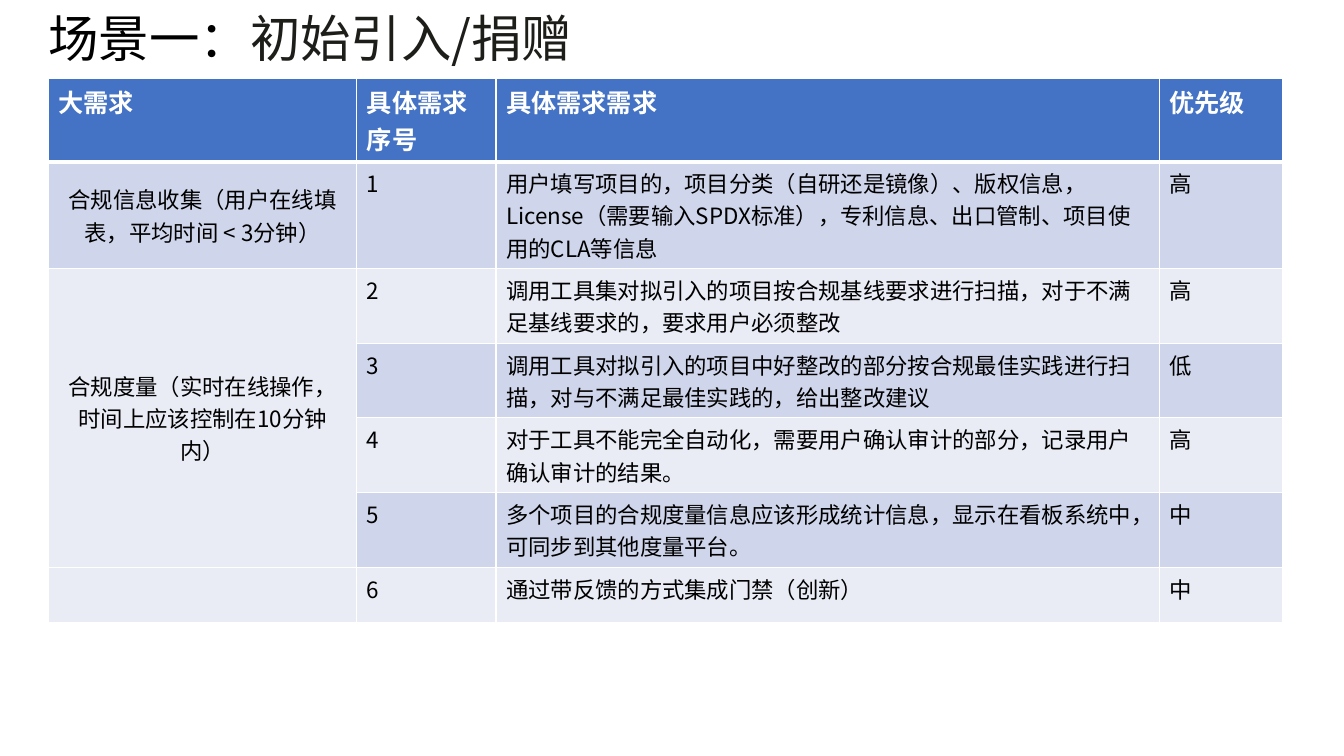
from dataclasses import dataclass

from lxml.etree import SubElement
from pptx import Presentation
from pptx.dml.color import RGBColor
from pptx.enum.text import MSO_ANCHOR as Anchor, MSO_AUTO_SIZE as AutoSize, PP_ALIGN as Align
from pptx.oxml.ns import qn
from pptx.util import Inches, Pt

FONT = "Noto Sans CJK SC"
BLACK = RGBColor(0x00, 0x00, 0x00)
INK = RGBColor(0x1D, 0x1D, 0x1A)
WHITE = RGBColor(0xFF, 0xFF, 0xFF)
HEADER_BLUE = RGBColor(0x44, 0x72, 0xC4)
BAND_DARK = RGBColor(0xCF, 0xD5, 0xEA)
BAND_LIGHT = RGBColor(0xE9, 0xEB, 0xF5)

COLUMN_WIDTHS = (3.06, 1.38, 6.58, 1.22)
HEADER_HEIGHT, ROW_HEIGHT = 0.75, 0.55
HEADINGS = ("大需求", "具体需求序号", "具体需求需求", "优先级")


@dataclass(frozen=True)
class Requirement:
    detail: str
    priority: str


@dataclass(frozen=True)
class Group:
    name: str
    requirements: tuple[Requirement, ...]


GROUPS = (
    Group("合规信息收集（用户在线填表，平均时间 < 3分钟）", (
        Requirement("用户填写项目的，项目分类（自研还是镜像）、版权信息，License（需要输入SPDX标准），"
                    "专利信息、出口管制、项目使用的CLA等信息", "高"),
    )),
    Group("合规度量（实时在线操作，时间上应该控制在10分钟内）", (
        Requirement("调用工具集对拟引入的项目按合规基线要求进行扫描，对于不满足基线要求的，要求用户必须整改", "高"),
        Requirement("调用工具对拟引入的项目中好整改的部分按合规最佳实践进行扫描，"
                    "对与不满足最佳实践的，给出整改建议", "低"),
        Requirement("对于工具不能完全自动化，需要用户确认审计的部分，记录用户确认审计的结果。", "高"),
        Requirement("多个项目的合规度量信息应该形成统计信息，显示在看板系统中，可同步到其他度量平台。", "中"),
    )),
    Group("", (Requirement("通过带反馈的方式集成门禁（创新）", "中"),)),
)


def add_run(paragraph, text: str, size: float, color: RGBColor, bold: bool = False) -> None:
    run = paragraph.add_run()
    run.text = text
    run.font.size = Pt(size)
    run.font.bold = bold
    run.font.name = FONT
    run.font.color.rgb = color
    SubElement(run.font._element, qn("a:ea"), typeface=FONT)


def set_borders(cell, bottom_width: float) -> None:
    properties = cell._tc.get_or_add_tcPr()
    widths = {"lnL": 1, "lnR": 1, "lnT": 1, "lnB": bottom_width}
    for position, (side, width) in enumerate(widths.items()):
        border = SubElement(properties, qn(f"a:{side}"), w=str(Pt(width)))
        line_fill = SubElement(border, qn("a:solidFill"))
        SubElement(line_fill, qn("a:srgbClr"), val=str(WHITE))
        properties.insert(position, border)


def fill_cell(cell, text: str, fill: RGBColor, header: bool = False, centred: bool = False) -> None:
    cell.fill.solid()
    cell.fill.fore_color.rgb = fill
    set_borders(cell, 3 if header else 1)
    paragraph = cell.text_frame.paragraphs[0]
    if centred:
        cell.vertical_anchor = Anchor.MIDDLE
        paragraph.alignment = Align.CENTER
    if text:
        add_run(paragraph, text, 18 if header else 16, WHITE if header else BLACK, header)


def add_title(slide) -> None:
    title = slide.shapes.title
    title.left, title.top = Inches(0.38), Inches(0.03)
    title.width, title.height = Inches(11.5), Inches(0.76)
    frame = title.text_frame
    frame.auto_size = AutoSize.NONE
    frame.vertical_anchor = Anchor.MIDDLE
    paragraph = frame.paragraphs[0]
    paragraph.alignment = Align.LEFT
    paragraph.line_spacing = 0.9
    add_run(paragraph, "场景一：", 36, BLACK)
    add_run(paragraph, "初始引入/捐赠", 36, INK)


def add_requirements(slide) -> None:
    row_count = 1 + sum(len(group.requirements) for group in GROUPS)
    requirements = slide.shapes.add_table(
        row_count, len(HEADINGS), Inches(0.48), Inches(0.78),
        Inches(sum(COLUMN_WIDTHS)), Inches(4.73)).table
    requirements.first_row = requirements.horz_banding = False
    for column, width in zip(requirements.columns, COLUMN_WIDTHS):
        column.width = Inches(width)
    for index, row in enumerate(requirements.rows):
        row.height = Inches(ROW_HEIGHT if index else HEADER_HEIGHT)

    # Header row
    for column, heading in enumerate(HEADINGS):
        fill_cell(requirements.cell(0, column), heading, HEADER_BLUE, header=True)

    # Numbered requirements, each group named in one merged cell
    number = 1
    for group in GROUPS:
        first = number
        for requirement in group.requirements:
            band = BAND_DARK if number % 2 else BAND_LIGHT
            name = group.name if number == first else ""
            fill_cell(requirements.cell(number, 0), name, band, centred=True)
            values = (str(number), requirement.detail, requirement.priority)
            for column, value in enumerate(values, start=1):
                fill_cell(requirements.cell(number, column), value, band)
            number += 1
        if number - first > 1:
            requirements.cell(first, 0).merge(requirements.cell(number - 1, 0))


def main() -> None:
    deck = Presentation()
    deck.slide_width, deck.slide_height = Inches(13.33), Inches(7.5)
    slide = deck.slides.add_slide(deck.slide_layouts[5])
    add_title(slide)
    add_requirements(slide)
    deck.save("out.pptx")


if __name__ == "__main__":
    main()
